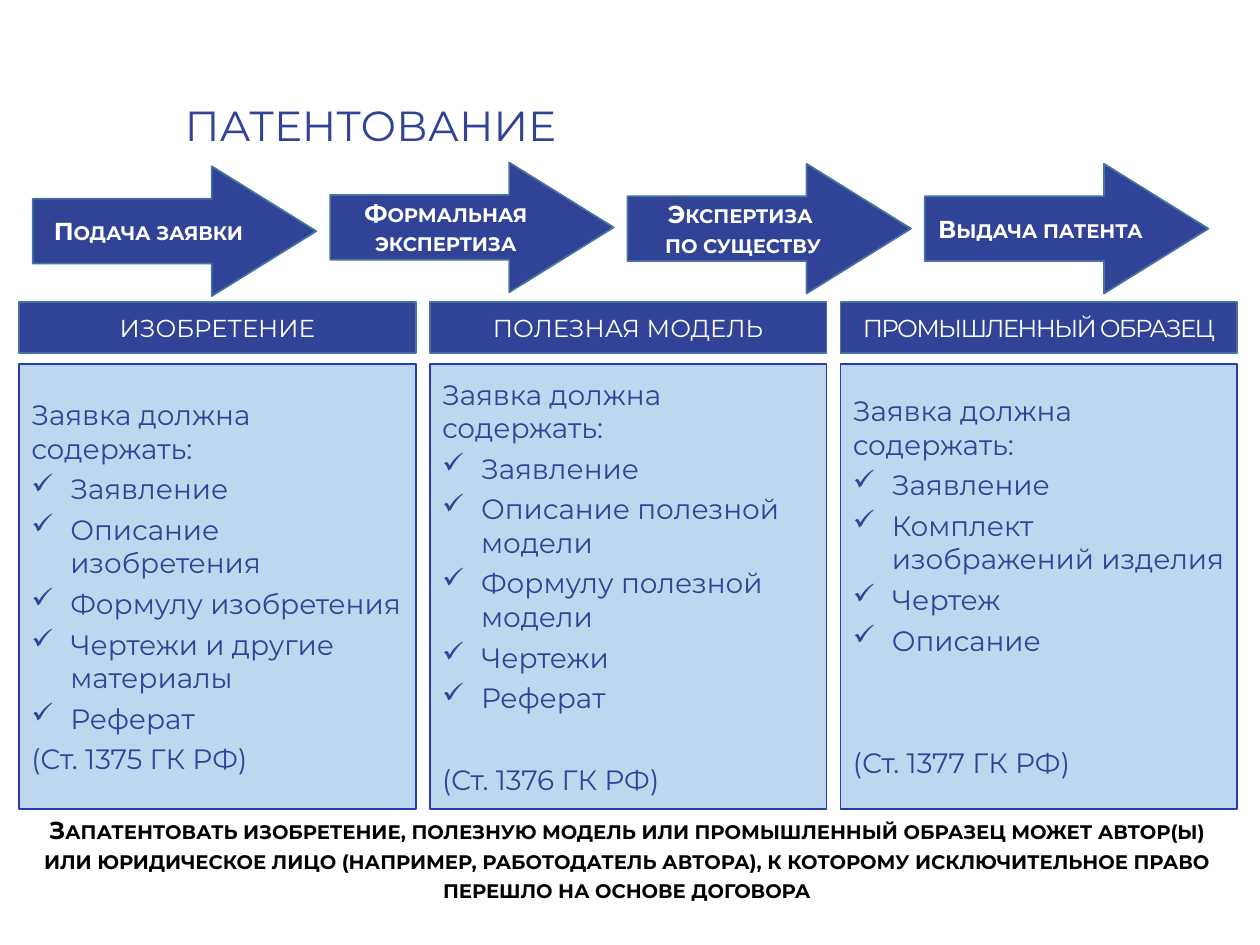
from lxml import etree
from pptx import Presentation
from pptx.dml.color import RGBColor
from pptx.enum.shapes import MSO_SHAPE
from pptx.enum.text import MSO_ANCHOR, PP_ALIGN
from pptx.oxml.ns import qn
from pptx.util import Inches, Pt

RECT, ARROW = MSO_SHAPE.RECTANGLE, MSO_SHAPE.RIGHT_ARROW
LEFT, CENTER = PP_ALIGN.LEFT, PP_ALIGN.CENTER
MIDDLE, TOP = MSO_ANCHOR.MIDDLE, MSO_ANCHOR.TOP
FONT = "Montserrat"
NAVY, EDGE, PALE, RIM = "314396", "43739E", "BDD7EE", "293DAD"
WHITE, BLACK = "FFFFFF", "000000"

TITLE = "ПАТЕНТОВАНИЕ"
STEPS = [
    ("Подача заявки", 1.32),
    ("Формальная экспертиза", 1.29),
    ("Экспертиза \vпо существу", 1.3),
    ("Выдача патента", 1.3),
]
LEAD = "Заявка должна содержать:"
COLUMNS = [
    {"head": "ИЗОБРЕТЕНИЕ", "track": 0, "gap": 0, "law": "(Ст. 1375 ГК РФ)",
     "items": ["Заявление", "Описание изобретения", "Формулу изобретения",
               "Чертежи и другие материалы", "Реферат"]},
    {"head": "ПОЛЕЗНАЯ МОДЕЛЬ", "track": 0, "gap": 1, "law": "(Ст. 1376 ГК РФ)",
     "items": ["Заявление", "Описание полезной модели",
               "Формулу полезной модели", "Чертежи", "Реферат"]},
    {"head": "ПРОМЫШЛЕННЫЙ ОБРАЗЕЦ", "track": -100, "gap": 2, "law": "(Ст. 1377 ГК РФ)",
     "items": ["Заявление", "Комплект изображений изделия", "Чертеж", "Описание"]},
]
NOTE = ("Запатентовать\u00a0изобретение, полезную модель или промышленный образец "
        "может автор(ы) или юридическое лицо (например, работодатель автора), "
        "к которому исключительное право перешло на основе договора")

STEP_X, STEP_GAP = 0.26, 2.36
COL_X, COL_GAP, COL_W = 0.15, 3.26, 3.15
LINE = 23.5


def color(code):
    return RGBColor.from_string(code)


def write(shape, text, size, ink, align, anchor=MIDDLE, small=False, track=0):
    frame = shape.text_frame
    frame.word_wrap = True
    frame.vertical_anchor = anchor
    frame.text = text
    for para in frame.paragraphs:
        para.alignment = align
        for run in para.runs:
            run.font.name = FONT
            run.font.size = Pt(size)
            run.font.color.rgb = color(ink)
            props = run.font._element
            if small:
                run.font.bold = True
                props.set("cap", "small")
            if track:
                props.set("spc", str(track))
    return frame.paragraphs


def block(slide, kind, box, fill, line):
    shape = slide.shapes.add_shape(kind, *map(Inches, box))
    shape.shadow.inherit = False
    shape.fill.solid()
    shape.fill.fore_color.rgb = color(fill)
    shape.line.color.rgb = color(line)
    shape.line.width = Pt(1)
    return shape


def label(slide, box):
    return slide.shapes.add_textbox(*map(Inches, box))


def check(para):
    props = para._p.get_or_add_pPr()
    props.set("marL", str(Inches(0.31)))
    props.set("indent", str(-Inches(0.31)))
    etree.SubElement(props, qn("a:buChar")).set("char", "✓")


def column(slide, left, data):
    head = block(slide, RECT, (left, 2.4, COL_W, 0.4), NAVY, EDGE)
    write(head, data["head"], 14, WHITE, CENTER, track=data["track"])
    body = block(slide, RECT, (left, 2.89, COL_W, 3.53), PALE, RIM)
    text = "\n".join([LEAD, *data["items"], data["law"]])
    paras = write(body, text, 16, NAVY, LEFT)
    for para in paras[1:-1]:
        check(para)
    for para in paras:
        para.space_after = Pt(4)
    if data["gap"]:
        paras[-1].space_before = Pt(LINE * data["gap"])


def main():
    deck = Presentation()
    deck.slide_width, deck.slide_height = Inches(10), Inches(7.5)
    slide = deck.slides.add_slide(deck.slide_layouts[6])
    title = label(slide, (1.37, 0.29, 7.94, 1.45))
    write(title, TITLE, 24, NAVY, LEFT)[0].line_spacing = 0.9
    for i, data in enumerate(COLUMNS):
        column(slide, COL_X + i * COL_GAP, data)
    for i, (text, top) in enumerate(STEPS):
        arrow = block(slide, ARROW, (STEP_X + i * STEP_GAP, top, 2.25, 1.03), NAVY, EDGE)
        arrow.adjustments[0] = 0.5
        arrow.adjustments[1] = 0.805
        write(arrow, text, 14, WHITE, CENTER, small=True)
    note = label(slide, (0.14, 6.42, 9.67, 0.81))
    write(note, NOTE, 14, BLACK, CENTER, TOP, small=True)
    deck.save("out.pptx")


if __name__ == "__main__":
    main()
